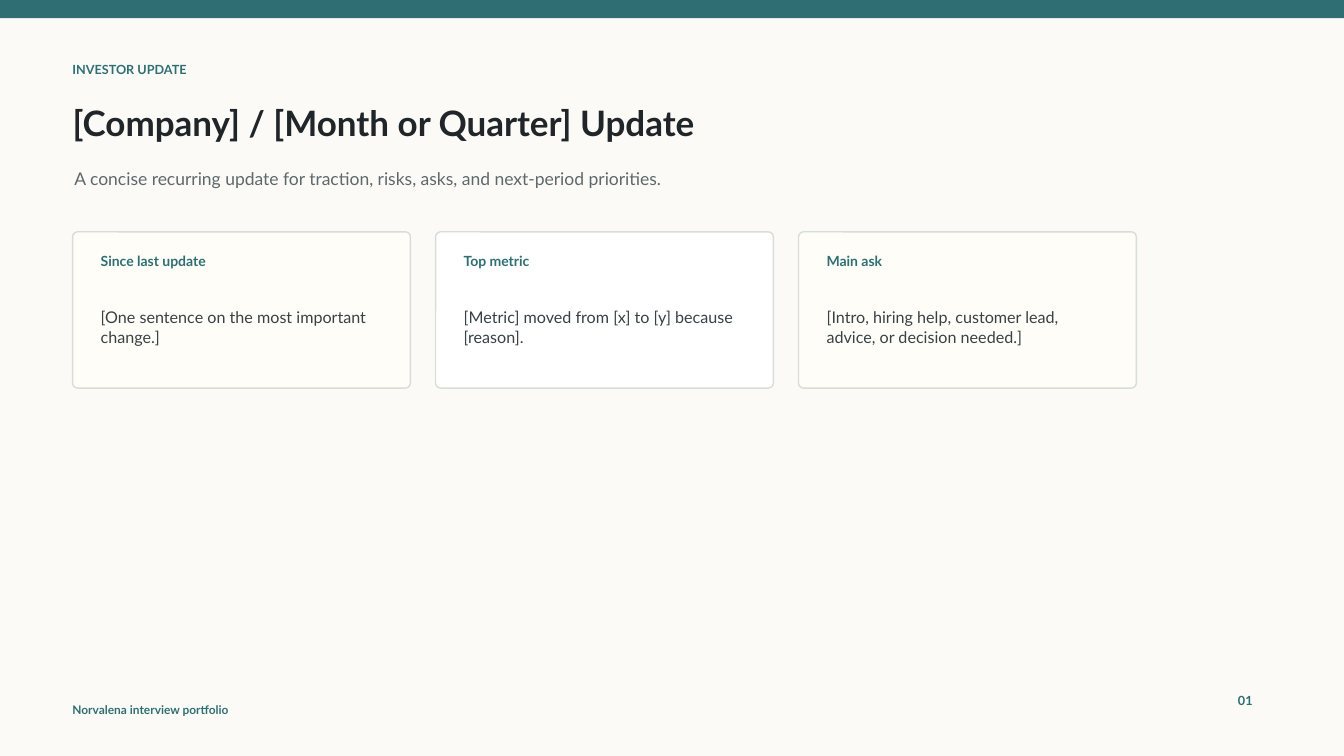
from pptx import Presentation
from pptx.dml.color import RGBColor
from pptx.enum.shapes import MSO_SHAPE
from pptx.enum.text import MSO_ANCHOR, MSO_AUTO_SIZE, PP_ALIGN
from pptx.util import Inches, Pt

TEAL = RGBColor(0x2F, 0x6F, 0x73)
INK = RGBColor(0x1F, 0x25, 0x28)
BODY = RGBColor(0x38, 0x41, 0x44)
MUTED = RGBColor(0x5E, 0x68, 0x6B)
PAPER = RGBColor(0xFB, 0xFA, 0xF6)
CREAM = RGBColor(0xFF, 0xFD, 0xF8)
WHITE = RGBColor(0xFF, 0xFF, 0xFF)
BORDER = RGBColor(0xD8, 0xDD, 0xD7)

FONT = "Lato"
SLIDE_W, SLIDE_H = 13.33, 7.5
MARGIN = 0.62
CARD_W, CARD_H, CARD_GAP = 3.35, 1.55, 0.25
CARD_PAD = 0.18

CARDS = [
    ("Since last update", "[One sentence on the most important change.]", CREAM),
    ("Top metric", "[Metric] moved from [x] to [y] because [reason].", WHITE),
    ("Main ask", "[Intro, hiring help, customer lead, advice, or decision needed.]", CREAM),
]


def write(holder, text, size, color, bold=False):
    """Fill a text holder with one left-aligned, vertically centred paragraph."""
    frame = holder.text_frame
    frame.word_wrap = True
    frame.auto_size = MSO_AUTO_SIZE.NONE
    frame.vertical_anchor = MSO_ANCHOR.MIDDLE
    paragraph = frame.paragraphs[0]
    paragraph.text = text
    paragraph.alignment = PP_ALIGN.LEFT
    font = paragraph.font
    font.name, font.size, font.bold = FONT, Pt(size), bold
    font.color.rgb = color


def add_label(slide, left, top, width, height, text, size, color, bold=False):
    box = slide.shapes.add_textbox(
        Inches(left), Inches(top), Inches(width), Inches(height))
    write(box, text, size, color, bold)


def add_panel(slide, kind, left, top, width, height, fill):
    panel = slide.shapes.add_shape(
        kind, Inches(left), Inches(top), Inches(width), Inches(height))
    panel.shadow.inherit = False
    panel.fill.solid()
    panel.fill.fore_color.rgb = fill
    panel.line.fill.background()
    return panel


def add_frame(slide):
    """Background, top band and footer."""
    slide.background.fill.solid()
    slide.background.fill.fore_color.rgb = PAPER
    add_panel(slide, MSO_SHAPE.RECTANGLE, 0, 0, SLIDE_W, 0.18, TEAL)
    add_label(slide, MARGIN, 6.94, 3, 0.2,
              "Norvalena interview portfolio", 8.5, TEAL, True)
    add_label(slide, 12.18, 6.82, 0.5, 0.25, "01", 9, TEAL, True)


def add_header(slide, left, top):
    """Eyebrow, title and subtitle."""
    add_label(slide, left, top, 4.8, 0.22, "INVESTOR UPDATE", 9, TEAL, True)
    title = slide.shapes.title
    title.left, title.top = Inches(left), Inches(top + 0.36)
    title.width, title.height = Inches(9.8), Inches(0.55)
    write(title, "[Company] / [Month or Quarter] Update", 25, INK, True)
    add_label(slide, left + 0.02, top + 0.98, 10.8, 0.42,
              "A concise recurring update for traction, risks, asks, "
              "and next-period priorities.", 12.5, MUTED)


def add_card(slide, left, top, width, height, heading, message, fill):
    card = add_panel(slide, MSO_SHAPE.ROUNDED_RECTANGLE,
                     left, top, width, height, fill)
    card.adjustments[0] = 0.032
    card.line.color.rgb = BORDER
    card.line.width = Pt(1)
    inner_left, inner_width = left + CARD_PAD, width - 2 * CARD_PAD
    add_label(slide, inner_left, top + 0.16, inner_width, 0.25,
              heading, 10, TEAL, True)
    add_label(slide, inner_left, top + 0.48, inner_width, height - 0.62,
              message, 11.5, BODY)


def add_card_row(slide, left, top):
    for index, (heading, message, fill) in enumerate(CARDS):
        add_card(slide, left + index * (CARD_W + CARD_GAP), top,
                 CARD_W, CARD_H, heading, message, fill)


def main():
    deck = Presentation()
    deck.slide_width, deck.slide_height = Inches(SLIDE_W), Inches(SLIDE_H)
    slide = deck.slides.add_slide(deck.slide_layouts.get_by_name("Title Only"))
    add_frame(slide)
    add_header(slide, MARGIN, 0.58)
    add_card_row(slide, MARGIN + 0.1, 2.3)
    deck.save("out.pptx")


if __name__ == "__main__":
    main()
